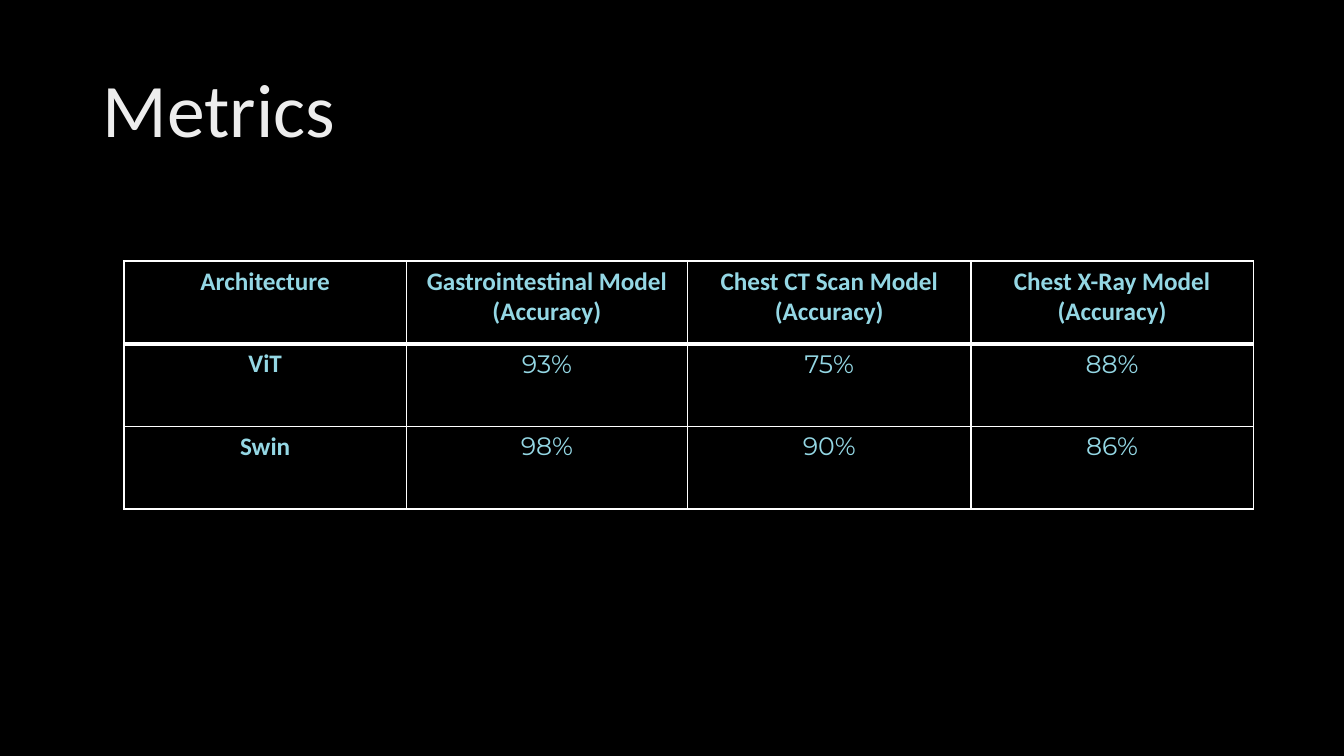
from lxml.etree import SubElement
from pptx import Presentation
from pptx.dml.color import RGBColor
from pptx.enum.text import MSO_ANCHOR, PP_ALIGN
from pptx.oxml.ns import qn
from pptx.util import Inches, Pt

TITLE = "Metrics"
ROWS = [
    ("Architecture", "Gastrointestinal Model\n(Accuracy)",
     "Chest CT Scan Model\n(Accuracy)", "Chest X-Ray Model\n(Accuracy)"),
    ("ViT", "93%", "75%", "88%"),
    ("Swin", "98%", "90%", "86%"),
]
COL_WIDTHS = (2.8, 2.79, 2.81, 2.8)
ROW_HEIGHT = 0.82

BLACK = RGBColor(0x00, 0x00, 0x00)
WHITE = RGBColor(0xFF, 0xFF, 0xFF)
LIGHT = RGBColor(0xED, 0xED, 0xED)
AQUA = RGBColor(0x94, 0xD7, 0xE4)


def write(tf, text, size, color, font="Calibri", bold=False,
          align=PP_ALIGN.LEFT, spacing=1.0):
    for i, line in enumerate(text.split("\n")):
        p = tf.add_paragraph() if i else tf.paragraphs[0]
        p.alignment = align
        p.line_spacing = spacing
        r = p.add_run()
        r.text = line
        r.font.name = font
        r.font.size = Pt(size)
        r.font.bold = bold
        r.font.color.rgb = color


def set_borders(cell, top, bottom):
    """Draw white borders; top and bottom are widths in points."""
    tc_pr = cell._tc.get_or_add_tcPr()
    for side, width in (("L", 1), ("R", 1), ("T", top), ("B", bottom)):
        ln = SubElement(tc_pr, qn(f"a:ln{side}"), w=str(Pt(width)))
        fill = SubElement(ln, qn("a:solidFill"))
        SubElement(fill, qn("a:srgbClr"), val=str(WHITE))


prs = Presentation()
prs.slide_width, prs.slide_height = Inches(13.33), Inches(7.5)
s = prs.slides.add_slide(prs.slide_layouts[6])
s.background.fill.solid()
s.background.fill.fore_color.rgb = BLACK

title = s.shapes.add_textbox(Inches(0.92), Inches(0.4), Inches(11.5), Inches(1.45))
title.text_frame.word_wrap = True
title.text_frame.vertical_anchor = MSO_ANCHOR.MIDDLE
write(title.text_frame, TITLE, 54, LIGHT, spacing=0.9)

table = s.shapes.add_table(
    len(ROWS), len(COL_WIDTHS), Inches(1.23), Inches(2.59),
    Inches(sum(COL_WIDTHS)), Inches(ROW_HEIGHT * len(ROWS))).table
for column, width in zip(table.columns, COL_WIDTHS):
    column.width = Inches(width)
for i, row in enumerate(ROWS):
    table.rows[i].height = Inches(ROW_HEIGHT)
    for j, text in enumerate(row):
        cell = table.cell(i, j)
        label = i == 0 or j == 0
        write(cell.text_frame, text, 18, AQUA, bold=label, align=PP_ALIGN.CENTER,
              font="Calibri" if label else "Montserrat")
        set_borders(cell, top=3 if i == 1 else 1, bottom=3 if i == 0 else 1)
        cell.fill.background()

prs.save("out.pptx")
